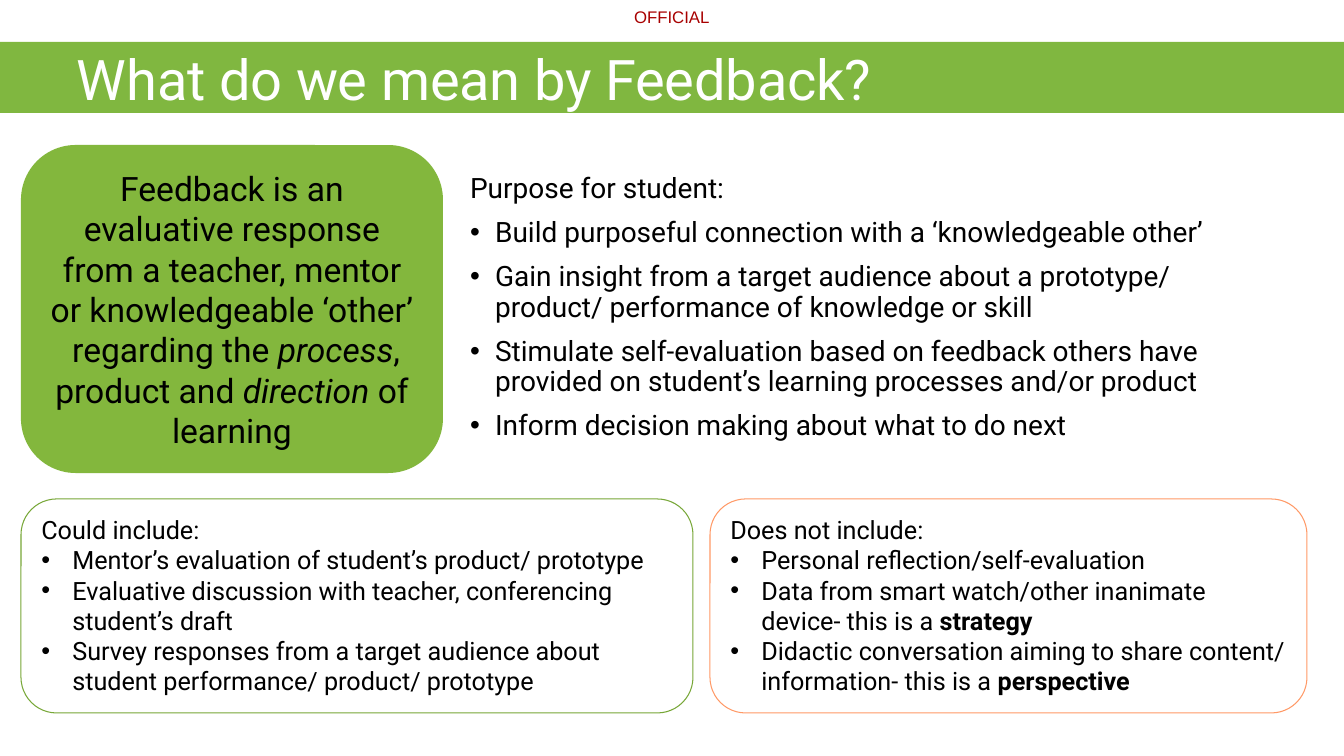
from lxml.etree import SubElement
from pptx import Presentation
from pptx.dml.color import RGBColor
from pptx.enum.shapes import MSO_SHAPE
from pptx.enum.text import MSO_ANCHOR, MSO_AUTO_SIZE, PP_ALIGN
from pptx.oxml.ns import qn
from pptx.util import Pt

PX = 914400 / 100.8
COLORS = {
    "marking": "A80000",
    "band": "80B740",
    "definition": "83B73D",
    "include": "77A737",
    "exclude": "FF9966",
    "text": "000000",
    "title": "FFFFFF",
}


def px(n):
    """Turn pixels into EMU."""
    return round(n * PX)


def rgb(name):
    """Look up a named colour."""
    return RGBColor.from_string(COLORS[name])


def place(sp, box):
    """Move a shape to a pixel box."""
    sp.left, sp.top, sp.width, sp.height = map(px, box)


def write(p, text, size=18, color="text", font="Roboto", align=PP_ALIGN.LEFT,
          line=1.0, before=0, indent=0, hang=0, bullet=False, **styles):
    """Fill a paragraph; text is a string or a list of strings and (string, style) pairs."""
    p.alignment, p.line_spacing, p.space_before = align, line, Pt(before)
    pPr = p._p.get_or_add_pPr()
    pPr.set("marL", str(px(indent)))
    pPr.set("indent", str(-px(hang)))
    if bullet:
        SubElement(pPr, qn("a:buFont")).set("typeface", "Arial")
        SubElement(pPr, qn("a:buChar")).set("char", "•")
    else:
        SubElement(pPr, qn("a:buNone"))
    for part in [text] if isinstance(text, str) else text:
        words, style = (part, None) if isinstance(part, str) else part
        r = p.add_run()
        r.text = words
        r.font.size, r.font.name = Pt(size), font
        r.font.color.rgb = rgb(color)
        r.font.bold, r.font.italic = style == "bold", style == "italic"
        if "spacing" in styles:
            r._r.get_or_add_rPr().set("spc", str(styles["spacing"]))


def write_list(tf, heading, items, indent, **fmt):
    """Write a heading followed by bulleted items."""
    write(tf.paragraphs[0], heading, **fmt)
    for item in items:
        write(tf.add_paragraph(), item, indent=indent, hang=indent, bullet=True, **fmt)


def rounded(s, box, fill=None, line=None):
    """Add a rounded rectangle and return its text frame."""
    sp = s.shapes.add_shape(MSO_SHAPE.ROUNDED_RECTANGLE, *map(px, box))
    sp.shadow.inherit = False
    if fill:
        sp.fill.solid()
        sp.fill.fore_color.rgb = rgb(fill)
    else:
        sp.fill.background()
    if line:
        sp.line.color.rgb = rgb(line)
        sp.line.width = Pt(0.75)
    else:
        sp.line.fill.background()
    tf = sp.text_frame
    tf.word_wrap = True
    tf.vertical_anchor = MSO_ANCHOR.MIDDLE if fill else MSO_ANCHOR.TOP
    return tf


def marking(s, box):
    """Add the classification marking."""
    tf = s.shapes.add_textbox(*map(px, box)).text_frame
    tf.margin_left = tf.margin_top = tf.margin_right = tf.margin_bottom = 0
    write(tf.paragraphs[0], "OFFICIAL", size=12, color="marking", font="Arial")


def title_band(s, box):
    """Turn the title placeholder into the green band."""
    sp = s.shapes.title
    place(sp, box)
    sp.fill.solid()
    sp.fill.fore_color.rgb = rgb("band")
    tf = sp.text_frame
    tf.word_wrap, tf.auto_size = True, MSO_AUTO_SIZE.NONE
    tf.vertical_anchor = MSO_ANCHOR.TOP
    tf.margin_left = tf.margin_right = tf.margin_bottom = 0
    tf.margin_top = px(3)
    write(tf.paragraphs[0], "What do we mean by Feedback?", size=40,
          color="title", before=2.3, indent=77, spacing=-10)


def purpose(s, box):
    """Fill the body placeholder with the purposes."""
    sp = s.placeholders[1]
    place(sp, box)
    tf = sp.text_frame
    tf.word_wrap, tf.auto_size = True, MSO_AUTO_SIZE.NONE
    write_list(tf, "Purpose for student:", [
        "Build purposeful connection with a ‘knowledgeable other’",
        "Gain insight from a target audience about a prototype/ product/ "
        "performance of knowledge or skill",
        "Stimulate self-evaluation based on feedback others have provided on "
        "student’s learning processes and/or product",
        "Inform decision making about what to do next",
    ], 25, size=20, line=0.9, before=10)


def definition(s, box):
    """Add the green definition card."""
    tf = rounded(s, box, fill="definition")
    write(tf.paragraphs[0], [
        "Feedback is an evaluative response from a teacher, mentor or "
        "knowledgeable ‘other’  regarding the ",
        ("process", "italic"), ", product and ",
        ("direction", "italic"), " of learning",
    ], size=24, align=PP_ALIGN.CENTER)


def outline_card(s, box, line, heading, items):
    """Add an outlined card with a heading and bullets."""
    write_list(rounded(s, box, line=line), heading, items, 31)


def main():
    """Build the slide and save it."""
    prs = Presentation()
    prs.slide_width, prs.slide_height = px(1344), px(756)
    s = prs.slides.add_slide(prs.slide_layouts[1])
    marking(s, (634, 7, 81, 20))
    title_band(s, (0, 42, 1344, 71))
    purpose(s, (460, 169, 811, 279))
    definition(s, (21, 145, 422, 328))
    outline_card(s, (21, 499, 672, 214), "include", "Could include:", [
        "Mentor’s evaluation of student’s product/ prototype",
        "Evaluative discussion with teacher, conferencing student’s draft",
        "Survey responses from a target audience about student performance/ "
        "product/ prototype",
    ])
    outline_card(s, (710, 499, 597, 214), "exclude", "Does not include:", [
        "Personal reflection/self-evaluation",
        ["Data from smart watch/other inanimate device- this is a ",
         ("strategy", "bold")],
        ["Didactic conversation aiming to share content/ information- this is a ",
         ("perspective", "bold")],
    ])
    prs.save("out.pptx")


if __name__ == "__main__":
    main()
